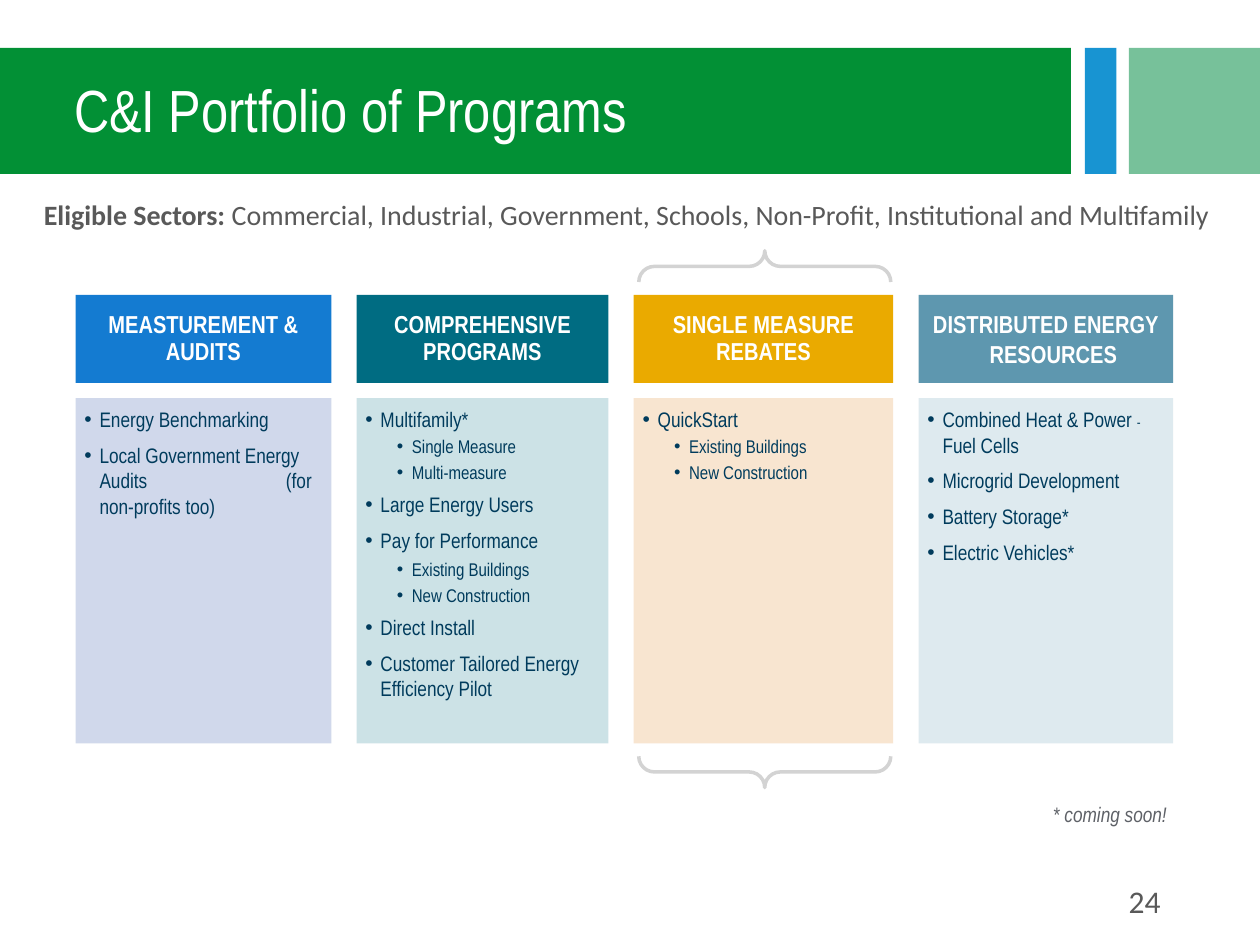
import pptx
import pptx.util
import pptx.dml.color
import pptx.enum.shapes
import pptx.enum.text
import pptx.oxml
import pptx.oxml.ns
import lxml.etree

Inches, Pt = pptx.util.Inches, pptx.util.Pt
RGBColor = pptx.dml.color.RGBColor
SHAPE = pptx.enum.shapes.MSO_SHAPE
ALIGN = pptx.enum.text.PP_ALIGN
ANCHOR = pptx.enum.text.MSO_ANCHOR
qn = pptx.oxml.ns.qn

WHITE = RGBColor(0xFF, 0xFF, 0xFF)
GREEN = RGBColor(0x02, 0x90, 0x35)
SKY = RGBColor(0x18, 0x94, 0xD2)
MINT = RGBColor(0x77, 0xC1, 0x9A)
GRAY = RGBColor(0x59, 0x59, 0x59)
NOTE_GRAY = RGBColor(0x5E, 0x61, 0x67)
BRACE_GRAY = RGBColor(0xD3, 0xD3, 0xD3)
NAVY = RGBColor(0x00, 0x3B, 0x5C)
BLUE = RGBColor(0x14, 0x7B, 0xD1)
PALE_BLUE = RGBColor(0xD0, 0xD8, 0xEB)
TEAL = RGBColor(0x00, 0x6C, 0x82)
PALE_TEAL = RGBColor(0xCC, 0xE2, 0xE6)
GOLD = RGBColor(0xEA, 0xAA, 0x00)
PALE_GOLD = RGBColor(0xF8, 0xE5, 0xD0)
STEEL = RGBColor(0x5E, 0x97, 0xAF)

COLUMNS = [
    (0.6, 2.03, BLUE, PALE_BLUE, 100, "MEASTUREMENT & AUDITS",
     [(1, "Energy Benchmarking"),
      (1, "Local Government Energy Audits\t(for non-profits too)")]),
    (2.83, 2, TEAL, PALE_TEAL, 100, "COMPREHENSIVE PROGRAMS",
     [(1, "Multifamily*"), (2, "Single Measure"), (2, "Multi-measure"),
      (1, "Large Energy Users"), (1, "Pay for Performance"),
      (2, "Existing Buildings"), (2, "New Construction"),
      (1, "Direct Install"),
      (1, "Customer Tailored Energy Efficiency Pilot")]),
    (5.03, 2.06, GOLD, PALE_GOLD, 100, "SINGLE MEASURE REBATES",
     [(1, "QuickStart"), (2, "Existing Buildings"), (2, "New Construction")]),
    (7.29, 2.02, STEEL, STEEL, 20, "DISTRIBUTED ENERGY RESOURCES",
     [(1, "Combined Heat & Power |- |Fuel Cells"),
      (1, "Microgrid Development"), (1, "Battery Storage*"),
      (1, "Electric Vehicles*")]),
]


def add_run(p, text, size=12, color=NAVY, font="Arial Narrow", bold=False, italic=False):
    """Append a formatted run to a paragraph."""
    r = p.add_run()
    r.text = text
    r.font.size, r.font.name = Pt(size), font
    r.font.bold, r.font.italic = bold, italic
    r.font.color.rgb = color


def set_indent(p, left, first):
    """Set the left margin and first-line indent of a paragraph."""
    pPr = p._p.get_or_add_pPr()
    pPr.set("marL", str(Inches(left)))
    pPr.set("indent", str(Inches(first)))
    return pPr


def add_rect(s, x, y, w, h, color, alpha=100):
    """Add a borderless filled rectangle."""
    sp = s.shapes.add_shape(SHAPE.RECTANGLE, Inches(x), Inches(y), Inches(w), Inches(h))
    sp.shadow.inherit = False
    sp.line.fill.background()
    sp.fill.solid()
    sp.fill.fore_color.rgb = color
    if alpha < 100:
        clr = sp._element.spPr.find(".//" + qn("a:srgbClr"))
        lxml.etree.SubElement(clr, qn("a:alpha")).set("val", str(alpha * 1000))
    return sp


def set_frame(tf, anchor, left, top, right, bottom):
    """Set wrapping, anchor and insets of a text frame."""
    tf.word_wrap = True
    tf.vertical_anchor = anchor
    tf.margin_left, tf.margin_top = Inches(left), Inches(top)
    tf.margin_right, tf.margin_bottom = Inches(right), Inches(bottom)


def add_label(s, x, y, w, h, align, anchor=ANCHOR.TOP):
    """Add a text box and return its first paragraph."""
    tf = s.shapes.add_textbox(Inches(x), Inches(y), Inches(w), Inches(h)).text_frame
    set_frame(tf, anchor, 0.1, 0.05, 0.1, 0.05)
    p = tf.paragraphs[0]
    p.alignment = align
    return p


def add_banner(s, x, y, h):
    """Draw the title banner with its accent bars."""
    add_rect(s, x + 8.62, y, 0.25, h, SKY)
    add_rect(s, x + 8.97, y, 1.04, h, MINT)
    add_rect(s, x, y, 8.51, h, GREEN)
    p = add_label(s, x, y + 0.02, 8.51, h, ALIGN.LEFT, ANCHOR.MIDDLE)
    set_indent(p, 0.5, 0)
    p.line_spacing = 0.9
    add_run(p, "C&I Portfolio of Programs", size=34, color=WHITE)


def add_heading(s, x, y, w, h, color, text, hanging):
    """Draw the heading block of a column."""
    tf = add_rect(s, x, y, w, h, color).text_frame
    set_frame(tf, ANCHOR.MIDDLE, 0.09, 0.05, 0.09, 0.05)
    p = tf.paragraphs[0]
    p.alignment = ALIGN.CENTER
    if hanging:
        set_indent(p, 0.12, -0.12)
    else:
        p.line_spacing = 0.9
    add_run(p, text, size=14, color=WHITE, bold=True)


def add_bullet(p, level, text):
    """Fill a paragraph with a bulleted program name."""
    pPr = set_indent(p, 0.12 if level == 1 else 0.37, -0.12)
    lxml.etree.SubElement(pPr, qn("a:buFont")).set("typeface", "Arial")
    lxml.etree.SubElement(pPr, qn("a:buChar")).set("char", "•")
    if "\t" in text:
        tabs = lxml.etree.SubElement(pPr, qn("a:tabLst"))
        tab = lxml.etree.SubElement(tabs, qn("a:tab"))
        tab.set("pos", str(Inches(1.6)))
        tab.set("algn", "l")
    for i, part in enumerate(text.split("|")):
        add_run(p, part, size=8 if i == 1 else 12 if level == 1 else 10.5)


def add_programs(s, x, y, w, h, color, alpha, items):
    """Draw the panel that lists the programs of a column."""
    tf = add_rect(s, x, y, w, h, color, alpha).text_frame
    set_frame(tf, ANCHOR.TOP, 0.07, 0.07, 0.09, 0.1)
    for i, (level, text) in enumerate(items):
        p = tf.paragraphs[0] if i == 0 else tf.add_paragraph()
        p.alignment = ALIGN.LEFT
        leads_group = i == 0 and items[1][0] == 2
        p.space_after = Pt(2 if level == 2 or leads_group else 3)
        if i and level == 1:
            p.space_before = Pt(3)
        add_bullet(p, level, text)


def add_columns(s, y):
    """Draw all program columns below the given top."""
    for x, w, dark, pale, alpha, title, items in COLUMNS:
        add_programs(s, x, y + 0.82, w, 2.74, pale, alpha, items)
        add_heading(s, x, y, w, 0.7, dark, title, hanging=alpha < 100)


def add_brace(s, x, y, w, h):
    """Draw braces above and below the given upright box."""
    left, top = x + (w - h) / 2, y + (h - w) / 2
    sp = s.shapes.add_shape(SHAPE.DOUBLE_BRACE, Inches(left), Inches(top), Inches(h), Inches(w))
    sp.shadow.inherit = False
    sp.rotation = 270
    sp.adjustments[0] = 0.062
    sp.fill.background()
    sp.line.color.rgb = BRACE_GRAY
    sp.line.width = Pt(2)


def main():
    """Build and save the slide."""
    prs = pptx.Presentation()
    prs.slide_width, prs.slide_height = Inches(10), Inches(7.5)
    s = prs.slides.add_slide(prs.slide_layouts[6])
    add_banner(s, -0.01, 0.38, 1)
    p = add_label(s, 7.06, 6.95, 2.25, 0.4, ALIGN.RIGHT)
    add_run(p, "24", size=18, color=GRAY, font="Calibri")
    p = add_label(s, -0.01, 1.52, 9.97, 0.37, ALIGN.CENTER)
    add_run(p, "Eligible Sectors: ", size=16, color=GRAY, font="Calibri", bold=True)
    add_run(p, "Commercial, Industrial, Government, Schools, Non-Profit, "
            "Institutional and Multifamily", size=16, color=GRAY, font="Calibri")
    add_columns(s, 2.34)
    add_brace(s, 5.07, 1.99, 2, 4.26)
    p = add_label(s, 6.23, 6.31, 3.13, 0.3, ALIGN.RIGHT)
    add_run(p, "* coming soon!", color=NOTE_GRAY, italic=True)
    prs.save("out.pptx")


if __name__ == "__main__":
    main()
